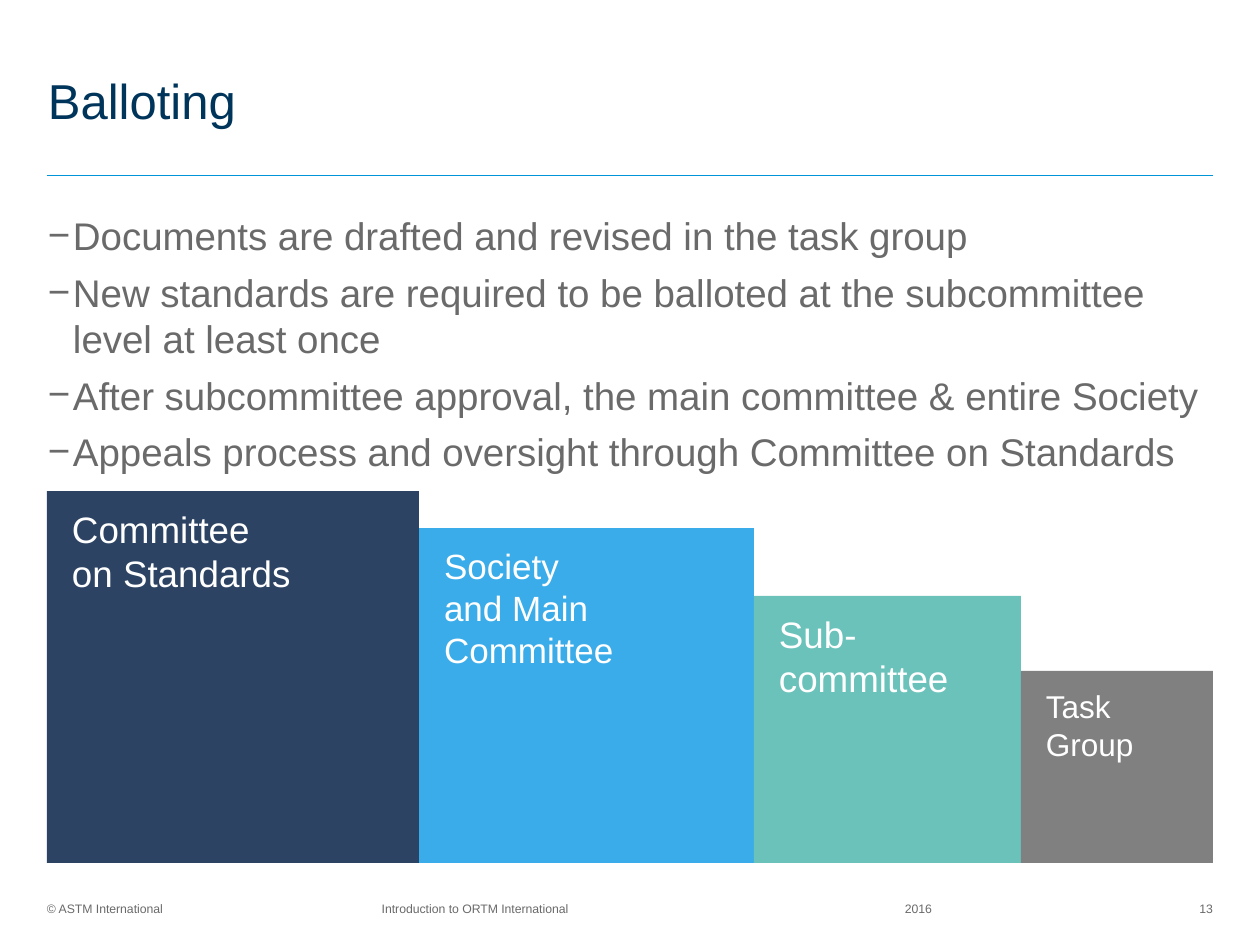
import pptx
import pptx.util
import pptx.dml.color
import pptx.enum.shapes
import pptx.enum.text
import pptx.oxml.ns
from lxml import etree

ALIGN = pptx.enum.text.PP_ALIGN
ANCHOR = pptx.enum.text.MSO_ANCHOR
SHAPE = pptx.enum.shapes.MSO_SHAPE
LINK = pptx.enum.shapes.MSO_CONNECTOR

TITLE = "Balloting"
POINTS = [
    "Documents are drafted and revised in the task group",
    "New standards are required to be balloted at the subcommittee level at least once",
    "After subcommittee approval, the main committee & entire Society",
    "Appeals process and oversight through Committee on Standards",
]
# lines, side of the square, fill, type size
STEPS = [
    (["Committee", "on Standards"], 372, "2D4363", 21),
    (["Society", "and Main Committee"], 335, "3AACE9", 20),
    (["Sub-", "committee"], 267, "6BC2BB", 21),
    (["Task", "Group"], 192, "808080", 18),
]
# text, left, width, alignment, anchor
FOOT = [
    ("© ASTM International", 47, 142, ALIGN.LEFT, ANCHOR.TOP),
    ("Introduction to ORTM International", 258, 434, ALIGN.CENTER, ANCHOR.MIDDLE),
    ("2016", 723, 391, ALIGN.CENTER, ANCHOR.MIDDLE),
    ("13", 1151, 62, ALIGN.RIGHT, ANCHOR.MIDDLE),
]
THEME = {
    "font": "Arial", "title": "00355B", "text": "6A6A6A",
    "rule": "0095D6", "light": "FFFFFF",
    "head": 28, "body": 22, "foot": 7,
}
LEFT, RIGHT, BASE = 47, 1213, 863
INDENT = 25


def px(n):
    return pptx.util.Emu(round(n * 914400 / 126))


def rgb(code):
    return pptx.dml.color.RGBColor.from_string(code)


def setup(frame, pad=(0, 0, 0, 0), anchor=ANCHOR.TOP):
    frame.word_wrap = True
    frame.vertical_anchor = anchor
    (frame.margin_left, frame.margin_top,
     frame.margin_right, frame.margin_bottom) = map(px, pad)
    return frame


def box(slide, x, y, w, h, anchor=ANCHOR.TOP):
    item = slide.shapes.add_textbox(px(x), px(y), px(w), px(h))
    return setup(item.text_frame, anchor=anchor)


def write(para, lines, size, color, align=ALIGN.LEFT):
    para.alignment = align
    for i, line in enumerate(lines):
        if i:
            para.add_line_break()
        run = para.add_run()
        run.text = line
        run.font.name = THEME["font"]
        run.font.size = pptx.util.Pt(size)
        run.font.color.rgb = rgb(color)


def dash(para):
    """Give the paragraph a hanging minus-sign bullet."""
    props = para._p.get_or_add_pPr()
    props.set("marL", str(px(INDENT)))
    props.set("indent", str(-px(INDENT)))
    qn = pptx.oxml.ns.qn
    etree.SubElement(props, qn("a:buFont")).set("typeface", THEME["font"])
    etree.SubElement(props, qn("a:buChar")).set("char", "−")


def rule(slide, y):
    line = slide.shapes.add_connector(LINK.STRAIGHT, px(LEFT), px(y), px(RIGHT), px(y))
    line.line.color.rgb = rgb(THEME["rule"])
    line.line.width = pptx.util.Pt(0.5)
    etree.SubElement(line._element.spPr, pptx.oxml.ns.qn("a:effectLst"))


def stairs(slide):
    """Set squares side by side on one base line."""
    x = LEFT
    for lines, side, fill, size in STEPS:
        block = slide.shapes.add_shape(
            SHAPE.RECTANGLE, px(x), px(BASE - side), px(side), px(side))
        block.shadow.inherit = False
        block.fill.solid()
        block.fill.fore_color.rgb = rgb(fill)
        block.line.fill.background()
        frame = setup(block.text_frame, (25, 16, 10, 10))
        write(frame.paragraphs[0], lines, size, THEME["light"])
        x += side


def main():
    deck = pptx.Presentation()
    deck.slide_width, deck.slide_height = px(1260), px(945)
    slide = deck.slides.add_slide(deck.slide_layouts[6])

    for text, x, w, align, anchor in FOOT:
        frame = box(slide, x, 901, w, 16, anchor)
        write(frame.paragraphs[0], [text], THEME["foot"], THEME["text"], align)
    rule(slide, 175)

    frame = box(slide, 48, 212, 1184, 645)
    for i, text in enumerate(POINTS):
        para = frame.add_paragraph() if i else frame.paragraphs[0]
        para.space_after = pptx.util.Pt(6)
        dash(para)
        write(para, [text], THEME["body"], THEME["text"])

    para = box(slide, 48, 44, 971, 118, ANCHOR.MIDDLE).paragraphs[0]
    para.line_spacing = pptx.util.Pt(30)
    write(para, [TITLE], THEME["head"], THEME["title"])

    stairs(slide)
    deck.save("out.pptx")


if __name__ == "__main__":
    main()
